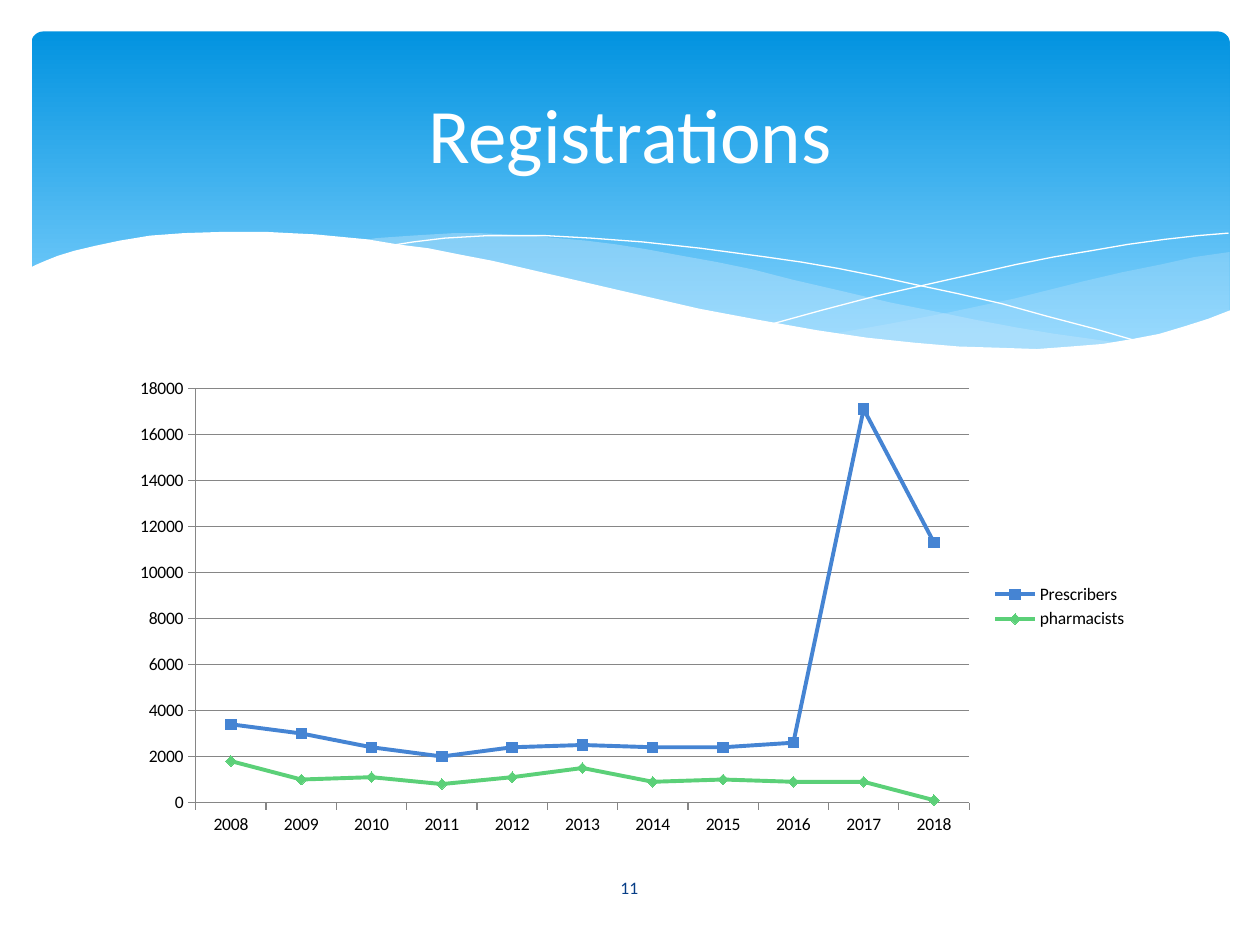
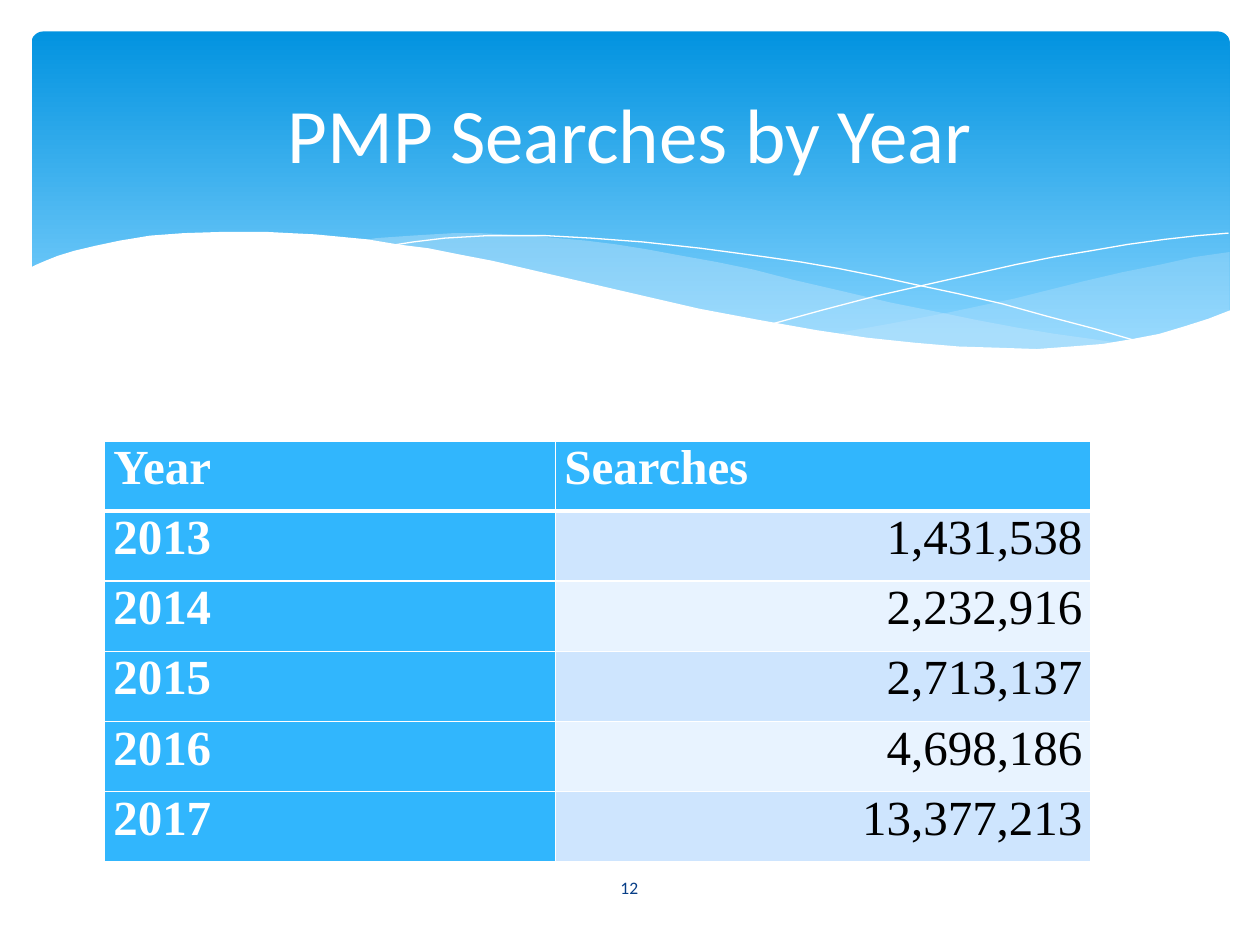
from lxml import etree
from pptx import Presentation
from pptx.chart.data import CategoryChartData
from pptx.dml.color import RGBColor
from pptx.enum.chart import XL_CHART_TYPE, XL_LEGEND_POSITION, XL_MARKER_STYLE, XL_TICK_MARK
from pptx.enum.shapes import MSO_SHAPE
from pptx.enum.text import MSO_ANCHOR, PP_ALIGN
from pptx.oxml.ns import qn
from pptx.util import Inches, Pt

LINE_MARKERS = XL_CHART_TYPE.LINE_MARKERS
LEGEND_RIGHT = XL_LEGEND_POSITION.RIGHT
SQUARE, DIAMOND = XL_MARKER_STYLE.SQUARE, XL_MARKER_STYLE.DIAMOND
TICK_OUTSIDE = XL_TICK_MARK.OUTSIDE
ROUNDED = MSO_SHAPE.ROUNDED_RECTANGLE
MIDDLE = MSO_ANCHOR.MIDDLE
LEFT, CENTER, RIGHT = PP_ALIGN.LEFT, PP_ALIGN.CENTER, PP_ALIGN.RIGHT

COLORS = {
    "white": "FFFFFF", "black": "000000", "band_top": "0293E0", "band_bottom": "83D3FE",
    "wave": "C6E7FC", "number": "073E87", "axis": "868686",
    "prescribers": "4584D3", "pharmacists": "5BD078",
    "header": "31B6FD", "odd_row": "CEE5FE", "even_row": "E8F3FF",
}
HEADING_FONT, TABLE_FONT = "Calibri", "Times New Roman"

REGISTRATIONS = {
    "title": "Registrations",
    "number": "11",
    "years": [str(year) for year in range(2008, 2019)],
    "series": [
        ("Prescribers", "prescribers", SQUARE,
         [3400, 3000, 2400, 2000, 2400, 2500, 2400, 2400, 2600, 17100, 11300]),
        ("pharmacists", "pharmacists", DIAMOND,
         [1800, 1000, 1100, 800, 1100, 1500, 900, 1000, 900, 900, 100]),
    ],
}
SEARCHES = {
    "title": "PMP Searches by Year",
    "number": "12",
    "rows": [
        ("Year", "Searches"),
        ("2013", "1,431,538"),
        ("2014", "2,232,916"),
        ("2015", "2,713,137"),
        ("2016", "4,698,186"),
        ("2017", "13,377,213"),
    ],
}

RIGHT_WAVE = [
    (9.76, 2), (9.48, 2.04), (9.21, 2.1), (8.91, 2.16), (8.61, 2.23), (8.05, 2.37),
    (7.53, 2.48), (7.06, 2.57), (6.61, 2.65), (6.91, 2.69), (7.19, 2.72), (7.45, 2.75),
    (7.69, 2.77), (8.03, 2.78), (8.35, 2.77), (8.63, 2.75), (8.89, 2.72), (9.13, 2.67),
    (9.35, 2.62), (9.49, 2.57), (9.63, 2.52), (9.76, 2.47),
]
MIDDLE_WAVE = [
    (8.93, 2.73), (8.66, 2.69), (8.37, 2.65), (8.07, 2.6), (7.75, 2.54), (7.41, 2.47),
    (7.06, 2.4), (6.68, 2.31), (6.29, 2.22), (5.98, 2.14), (5.69, 2.08), (5.41, 2.03),
    (5.14, 1.98), (4.89, 1.94), (4.65, 1.91), (4.42, 1.89), (4.2, 1.87), (3.99, 1.86),
    (3.8, 1.85), (3.61, 1.85), (3.28, 1.87), (2.99, 1.89), (2.86, 1.91), (3.23, 1.96),
    (3.62, 2.03), (4.04, 2.11), (4.49, 2.22), (4.91, 2.32), (5.3, 2.4), (5.66, 2.48),
    (6.01, 2.55), (6.34, 2.61), (6.65, 2.66), (6.95, 2.7), (7.22, 2.74), (7.48, 2.76),
    (7.85, 2.78), (8.28, 2.78), (8.57, 2.77), (8.76, 2.75),
]
FALLING_LINE = [
    (3.09, 1.95), (3.28, 1.92), (3.53, 1.89), (3.87, 1.87), (4.33, 1.87), (4.69, 1.89),
    (5.1, 1.92), (5.56, 1.97), (6.08, 2.04), (6.36, 2.08), (6.65, 2.13), (6.95, 2.19),
    (7.27, 2.26), (7.6, 2.33), (7.95, 2.41), (8.31, 2.51), (8.69, 2.61), (9.07, 2.72),
]
RISING_LINE = [
    (6.13, 2.57), (6.53, 2.46), (6.95, 2.35), (7.48, 2.23), (8.06, 2.1), (8.36, 2.04),
    (8.66, 1.99), (8.95, 1.94), (9.24, 1.9), (9.51, 1.87), (9.75, 1.85),
]
FRONT_WAVE = [
    (9.77, 2.46), (9.59, 2.53), (9.4, 2.59), (9.2, 2.65), (8.99, 2.69), (8.75, 2.73),
    (8.5, 2.75), (8.23, 2.77), (7.93, 2.76), (7.61, 2.75), (7.26, 2.72), (6.88, 2.68),
    (6.48, 2.62), (6.03, 2.54), (5.55, 2.45), (5.03, 2.33), (4.47, 2.2), (3.91, 2.07),
    (3.65, 2.02), (3.4, 1.97), (3.16, 1.94), (2.92, 1.9), (2.71, 1.88), (2.5, 1.86),
    (2.3, 1.85), (2.11, 1.84), (1.77, 1.84), (1.46, 1.85), (1.19, 1.87), (0.95, 1.91),
    (0.76, 1.95), (0.59, 1.99), (0.46, 2.03), (0.36, 2.07), (0.29, 2.1), (0.23, 2.13),
    (0.23, 3.29), (9.77, 3.29),
]
WAVES = [
    (RIGHT_WAVE, "wave", 29),
    (MIDDLE_WAVE, "wave", 40),
    (FALLING_LINE, None, None),
    (RISING_LINE, None, None),
    (FRONT_WAVE, "white", 100),
]


def rgb(name):
    return RGBColor.from_string(COLORS[name])


def box(*lengths):
    return [Inches(length) for length in lengths]


def style_font(font, name, size, color, bold=False):
    font.name, font.size, font.bold = name, Pt(size), bold
    font.color.rgb = rgb(color)


def paint(fill, color, opacity=100):
    fill.solid()
    fill.fore_color.rgb = rgb(color)
    if opacity < 100:
        color_element = fill._xPr.find(qn("a:solidFill"))[0]
        etree.SubElement(color_element, qn("a:alpha"), val=str(opacity * 1000))


def add_wave(slide, points, color, opacity):
    start, *rest = [box(*point) for point in points]
    builder = slide.shapes.build_freeform(*start)
    builder.add_line_segments(rest, close=color is not None)
    shape = builder.convert_to_shape()
    shape.shadow.inherit = False
    if color:
        paint(shape.fill, color, opacity)
        shape.line.fill.background()
    else:
        shape.fill.background()
        shape.line.color.rgb = rgb("white")
        shape.line.width = Pt(0)


def add_band(slide):
    band = slide.shapes.add_shape(ROUNDED, *box(0.25, 0.25, 9.51, 2.7))
    band.adjustments[0] = 0.034
    band.shadow.inherit = False
    band.line.fill.background()
    band.fill.gradient()
    band.fill.gradient_angle = 270
    stops = [("band_top", 0), ("band_bottom", 0.9)]
    for stop, (color, position) in zip(band.fill.gradient_stops, stops):
        stop.color.rgb = rgb(color)
        stop.position = position
    for points, color, opacity in WAVES:
        add_wave(slide, points, color, opacity)


def add_text(slide, text, place, size, color):
    frame = slide.shapes.add_textbox(*box(*place)).text_frame
    frame.word_wrap = True
    frame.vertical_anchor = MIDDLE
    paragraph = frame.paragraphs[0]
    paragraph.text = text
    paragraph.alignment = CENTER
    style_font(paragraph.font, HEADING_FONT, size, color)


def add_slide(presentation, content):
    slide = presentation.slides.add_slide(presentation.slide_layouts[6])
    add_band(slide)
    add_text(slide, content["title"], (0.5, 0.37, 9, 1.37), 44, "white")
    add_text(slide, content["number"], (4.36, 6.84, 1.27, 0.4), 10, "number")
    return slide


def add_registrations_chart(slide, content):
    data = CategoryChartData()
    data.categories = content["years"]
    for name, _, _, values in content["series"]:
        data.add_series(name, values)
    chart = slide.shapes.add_chart(LINE_MARKERS, *box(0.95, 2.93, 8.1, 3.77), data).chart
    style_font(chart.font, HEADING_FONT, 10, "black")
    chart.has_title = False
    chart.has_legend = True
    chart.legend.position = LEGEND_RIGHT
    chart.legend.include_in_layout = False
    chart.plots[0].vary_by_categories = False

    value_axis = chart.value_axis
    value_axis.minimum_scale, value_axis.maximum_scale = 0, 18000
    value_axis.major_unit = 2000
    value_axis.has_major_gridlines = True
    for axis in (chart.category_axis, value_axis):
        axis.major_tick_mark = TICK_OUTSIDE
    for part in (chart.category_axis, value_axis, value_axis.major_gridlines):
        part.format.line.color.rgb = rgb("axis")
        part.format.line.width = Pt(0.75)

    for series, (_, color, marker_style, _) in zip(chart.plots[0].series, content["series"]):
        series.smooth = False
        series.format.line.color.rgb = rgb(color)
        series.format.line.width = Pt(2.25)
        series.marker.style = marker_style
        series.marker.size = 6
        paint(series.marker.format.fill, color)
        series.marker.format.line.color.rgb = rgb(color)


def add_borders(cell, is_header, is_first_body_row):
    widths = {"lnL": 1, "lnR": 1, "lnT": 3 if is_first_body_row else 1,
              "lnB": 3 if is_header else 1}
    properties = cell._tc.get_or_add_tcPr()
    for index, (side, width) in enumerate(widths.items()):
        line = etree.Element(qn(f"a:{side}"), w=str(Pt(width)))
        fill = etree.SubElement(line, qn("a:solidFill"))
        etree.SubElement(fill, qn("a:srgbClr"), val=COLORS["white"])
        properties.insert(index, line)


def add_searches_table(slide, content):
    rows = content["rows"]
    widths = [3.58, 4.25]
    place = box(0.83, 3.5, sum(widths), 3.34)
    table = slide.shapes.add_table(len(rows), len(widths), *place).table
    for column, width in zip(table.columns, widths):
        column.width = Inches(width)
    for row_index, row in enumerate(rows):
        for column_index, text in enumerate(row):
            cell = table.cell(row_index, column_index)
            is_heading = row_index == 0 or column_index == 0
            body_color = "odd_row" if row_index % 2 else "even_row"
            paint(cell.fill, "header" if is_heading else body_color)
            cell.margin_left = cell.margin_right = Inches(0.07)
            cell.margin_top = cell.margin_bottom = 0
            add_borders(cell, row_index == 0, row_index == 1)
            paragraph = cell.text_frame.paragraphs[0]
            paragraph.text = text
            paragraph.alignment = LEFT if is_heading else RIGHT
            style_font(paragraph.font, TABLE_FONT, 28,
                       "white" if is_heading else "black", is_heading)


def main():
    presentation = Presentation()
    presentation.slide_width, presentation.slide_height = box(10, 7.5)
    add_registrations_chart(add_slide(presentation, REGISTRATIONS), REGISTRATIONS)
    add_searches_table(add_slide(presentation, SEARCHES), SEARCHES)
    presentation.save("out.pptx")


if __name__ == "__main__":
    main()
